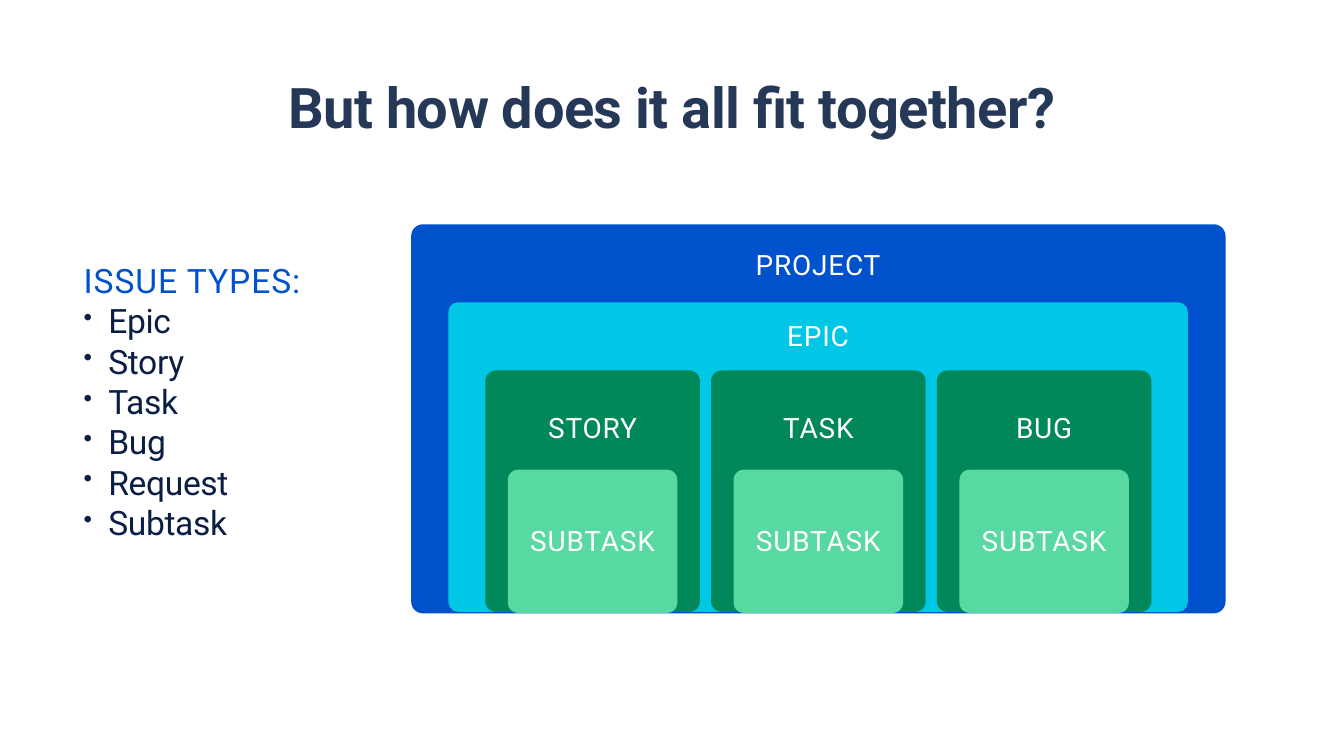
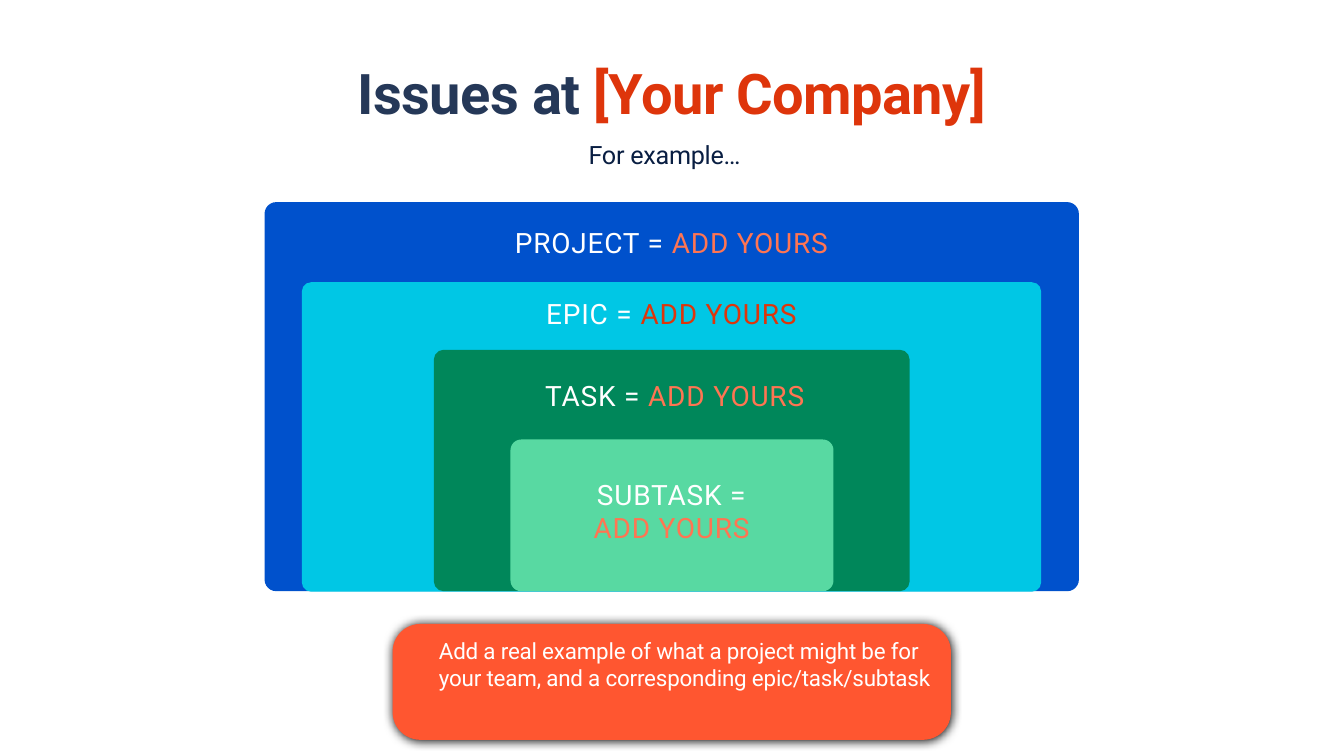
import pptx
import pptx.util
import pptx.dml.color
import pptx.enum.shapes
import pptx.enum.text
import pptx.oxml
import pptx.oxml.ns
from dataclasses import dataclass

Inches = pptx.util.Inches
ALIGN = pptx.enum.text.PP_ALIGN


@dataclass(frozen=True)
class Theme:
    font: str = "Roboto"
    # Colours
    background: str = "FFFFFF"
    title: str = "253858"
    body: str = "091E42"
    light: str = "FFFFFF"
    project: str = "0051CC"
    epic: str = "00C7E5"
    task: str = "00875A"
    subtask: str = "58D9A2"
    prompt: str = "FF7552"
    prompt_dark: str = "DE350B"
    callout: str = "FF5630"
    # Type sizes in points
    title_size: int = 80
    list_size: int = 48
    label_size: int = 40
    caption_size: int = 36
    callout_size: int = 32


THEME = Theme()


def rgb(colour):
    return pptx.dml.color.RGBColor.from_string(colour)


def add_run(paragraph, words, size, colour, spacing, bold=False):
    run = paragraph.add_run()
    run.text = words
    run.font.name = THEME.font
    run.font.size = pptx.util.Pt(size)
    run.font.bold = bold
    run.font.color.rgb = rgb(colour)
    # Letter spacing is stored in hundredths of a point
    run.font._element.set("spc", str(round(spacing * 100)))


def add_text_frame(slide, left, top, width, height, margin=0.06, grow=True):
    box = slide.shapes.add_textbox(Inches(left), Inches(top), Inches(width), Inches(height))
    frame = box.text_frame
    frame.word_wrap = True
    frame.vertical_anchor = pptx.enum.text.MSO_ANCHOR.TOP
    fit = pptx.enum.text.MSO_AUTO_SIZE
    frame.auto_size = fit.SHAPE_TO_FIT_TEXT if grow else fit.NONE
    frame.margin_left = frame.margin_right = Inches(margin)
    frame.margin_top = frame.margin_bottom = Inches(margin)
    return frame


def add_title(slide, top, *parts):
    """Each part is a (words, colour) pair."""
    paragraph = add_text_frame(slide, 1.94, top, 22.78, 1.51).paragraphs[0]
    paragraph.alignment = ALIGN.CENTER
    paragraph.line_spacing = 0.9
    for words, colour in parts:
        add_run(paragraph, words, THEME.title_size, colour, -0.8, bold=True)


def add_label(slide, left, top, width, name, prompt_colour=None, height=0.82):
    paragraph = add_text_frame(slide, left, top, width, height).paragraphs[0]
    paragraph.alignment = ALIGN.CENTER
    parts = [(name, THEME.light)]
    if prompt_colour:
        parts = [(name + " = ", THEME.light), ("ADD YOURS", prompt_colour)]
    for words, colour in parts:
        add_run(paragraph, words, THEME.label_size, colour, 1.2)


def add_panel(slide, left, top, width, height, colour, rounding):
    panel = slide.shapes.add_shape(
        pptx.enum.shapes.MSO_SHAPE.ROUNDED_RECTANGLE,
        Inches(left), Inches(top), Inches(width), Inches(height))
    panel.adjustments[0] = rounding
    panel.shadow.inherit = False
    panel.fill.solid()
    panel.fill.fore_color.rgb = rgb(colour)
    panel.line.fill.background()
    return panel


def add_bullet(paragraph, indent):
    properties = paragraph._p.get_or_add_pPr()
    properties.set("marL", str(Inches(indent)))
    properties.set("indent", str(-Inches(indent)))
    namespace = pptx.oxml.ns.nsdecls("a")
    for tag in ('buSzPct {} val="75000"', 'buChar {} char="•"'):
        properties.append(pptx.oxml.parse_xml("<a:" + tag.format(namespace) + "/>"))


def add_issue_types(slide, names):
    frame = add_text_frame(slide, 1.6, 5.1, 5.12, 6.04)
    add_run(frame.paragraphs[0], "ISSUE TYPES:", THEME.list_size, THEME.project, 1.4)
    for name in names:
        paragraph = frame.add_paragraph()
        add_bullet(paragraph, 0.49)
        add_run(paragraph, name, THEME.list_size, THEME.body, -0.5)


def add_project_and_epic(slide, left, top, epic_drop, epic_label_drop=1.81,
                         project_prompt=None, epic_prompt=None):
    """The two outer levels, which both slides share."""
    add_panel(slide, left, top, 16.16, 7.72, THEME.project, 0.03)
    add_panel(slide, left + 0.74, top + epic_drop, 14.67, 6.14, THEME.epic, 0.03)
    add_label(slide, left + 0.07, top + 0.41, 16.01, "PROJECT", project_prompt)
    add_label(slide, left + 0.07, top + epic_label_drop, 16.01, "EPIC", epic_prompt)


def add_issue_column(slide, left, name):
    width, inset = 4.26, 0.45
    add_panel(slide, left, 7.35, width, 4.79, THEME.task, 0.05)
    add_panel(slide, left + inset, 9.32, width - 2 * inset, 2.84, THEME.subtask, 0.07)
    add_label(slide, left, 8.09, width, name)
    add_label(slide, left, 10.33, width, "SUBTASK")


def add_callout(slide, words):
    panel = add_panel(slide, 7.79, 12.38, 11.08, 2.3, THEME.callout, 0.24)
    effects = panel._element.spPr.find(pptx.oxml.ns.qn("a:effectLst"))
    effects.append(pptx.oxml.parse_xml(
        f'<a:outerShdw {pptx.oxml.ns.nsdecls("a")} blurRad="{pptx.util.Pt(15)}" '
        f'dist="{pptx.util.Pt(0.7)}" dir="5400000" rotWithShape="0">'
        '<a:srgbClr val="000000"/></a:outerShdw>'))
    frame = add_text_frame(slide, 8.65, 12.59, 10.16, 1.77, grow=False)
    add_run(frame.paragraphs[0], words, THEME.callout_size, THEME.light, -0.3)


def add_slide(deck):
    slide = deck.slides.add_slide(deck.slide_layouts[6])
    slide.background.fill.solid()
    slide.background.fill.fore_color.rgb = rgb(THEME.background)
    return slide


def build_hierarchy(deck):
    slide = add_slide(deck)
    add_title(slide, 1.53, ("But how does it all fit together?", THEME.title))
    add_issue_types(slide, ["Epic", "Story", "Task", "Bug", "Request", "Subtask"])
    add_project_and_epic(slide, 8.16, 4.45, epic_drop=1.55)
    for column, name in enumerate(["STORY", "TASK", "BUG"]):
        add_issue_column(slide, 9.63 + 4.48 * column, name)


def build_company_example(deck):
    slide = add_slide(deck)
    add_title(slide, 1.26, ("Issues at ", THEME.title),
              ("[Your Company]", THEME.prompt_dark))
    caption = add_text_frame(slide, 11.68, 2.77, 5.16, 0.61, margin=0)
    add_run(caption.paragraphs[0], "For example…", THEME.caption_size, THEME.body, -0.4)

    # Nested levels, from project down to subtask
    add_project_and_epic(slide, 5.25, 4.01, epic_drop=1.59,
                         project_prompt=THEME.prompt, epic_prompt=THEME.prompt_dark)
    add_panel(slide, 8.61, 6.94, 9.44, 4.79, THEME.task, 0.04)
    add_panel(slide, 10.13, 8.72, 6.41, 3.01, THEME.subtask, 0.07)
    add_label(slide, 9.94, 7.46, 6.9, "TASK", THEME.prompt)
    add_label(slide, 11.2, 9.41, 4.26, "SUBTASK", THEME.prompt, height=1.53)

    add_callout(slide, "Add a real example of what a project might be for your team, "
                       "and a corresponding epic/task/subtask")


def main():
    deck = pptx.Presentation()
    deck.slide_width = Inches(26.67)
    deck.slide_height = Inches(15)
    build_hierarchy(deck)
    build_company_example(deck)
    deck.save("out.pptx")


if __name__ == "__main__":
    main()
